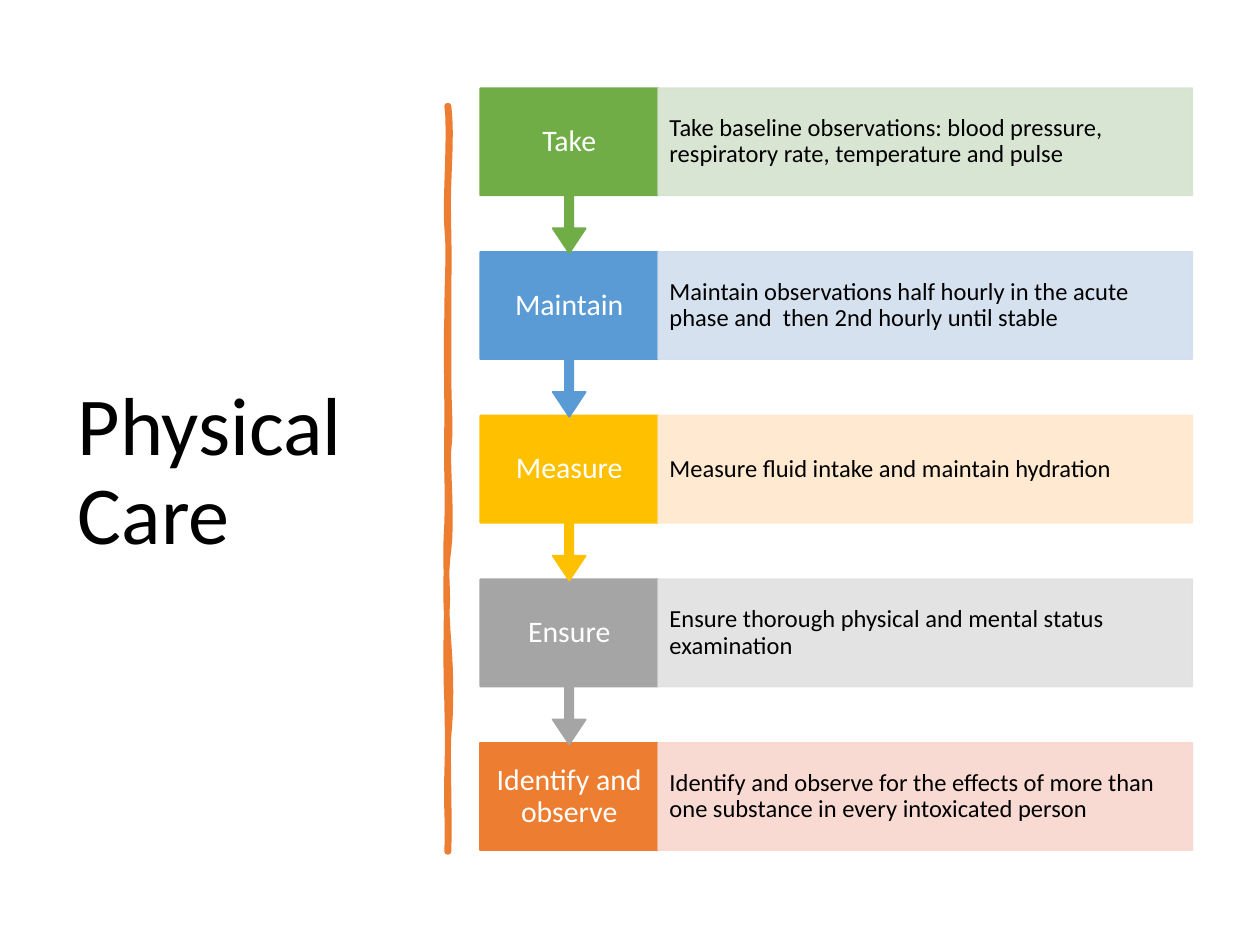
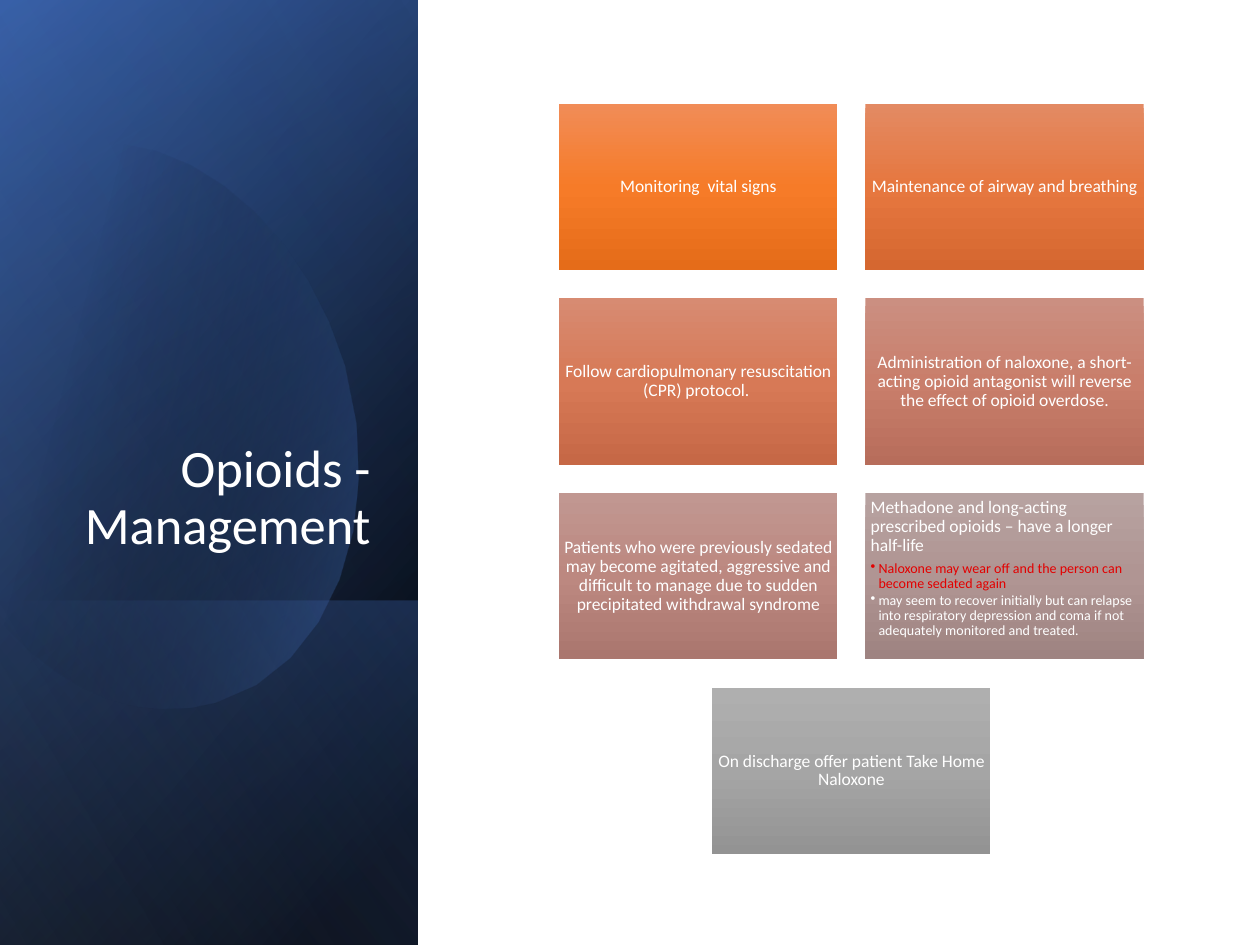
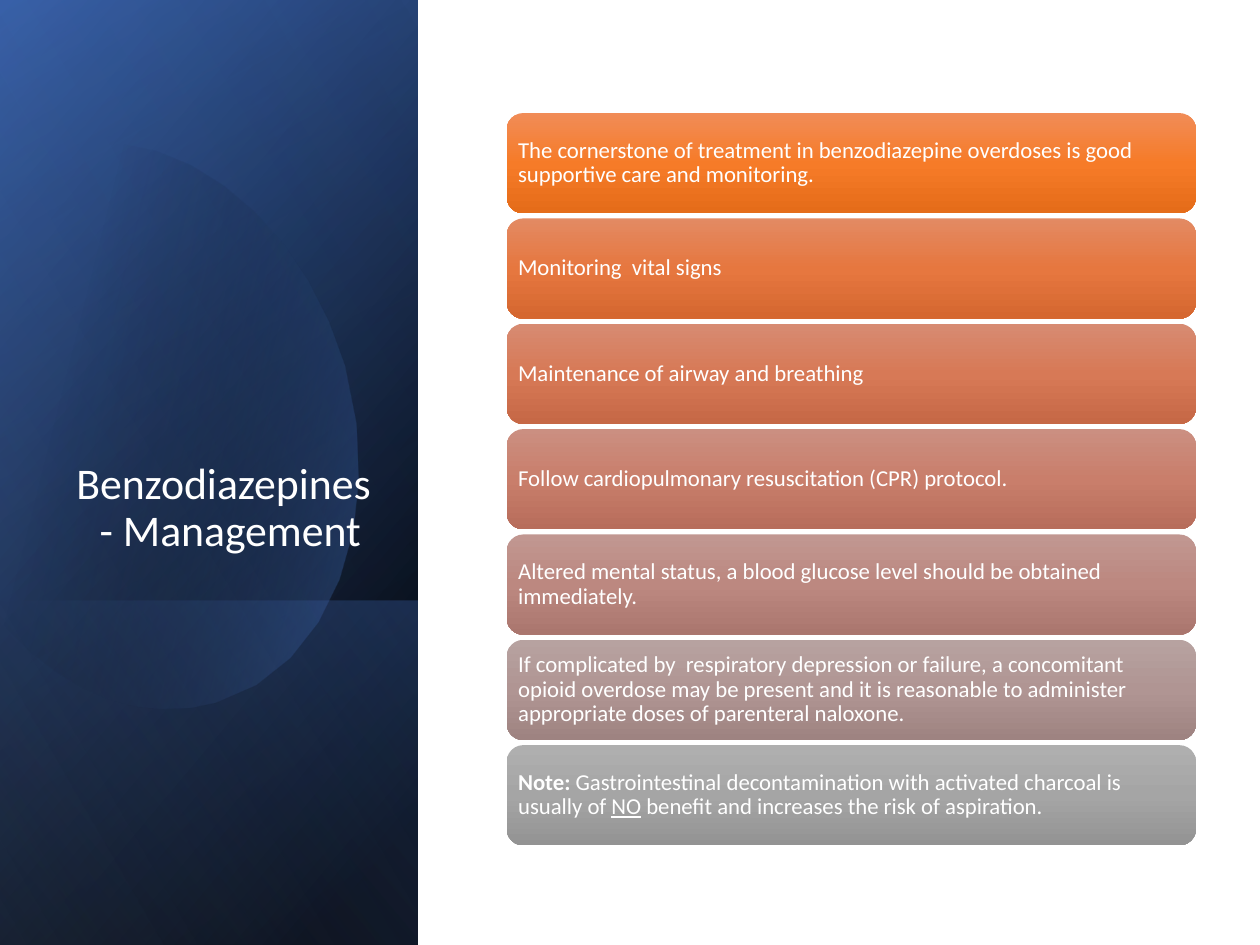
"""Build three slides on the physical care of intoxicated people."""
from lxml import etree
from pptx import Presentation
from pptx import util as u
from pptx.dml.color import RGBColor
from pptx.enum import shapes, text
from pptx.oxml.ns import qn

Pt = u.Pt
SHAPE = shapes.MSO_SHAPE
ANCHOR = text.MSO_ANCHOR
ALIGN = text.PP_ALIGN
FONT = "Calibri"

COLORS = {
    "black": "000000", "white": "FFFFFF", "red": "E30000",
    "navy": "2F5597", "blue": "4472C4", "sky": "8FAADC",
    "take": "70AD47", "take_pale": "D5E3CF",
    "maintain": "5B9BD5", "maintain_pale": "D2DEEF",
    "measure": "FFC000", "measure_pale": "FFE8CC",
    "ensure": "A5A5A5", "ensure_pale": "E1E1E1",
    "identify": "ED7D31", "identify_pale": "F8D7CE",
}
SHADES = {
    "orange": ("F18C57", "F67B28", "E56C19"),
    "pumpkin": ("E38A63", "E6773F", "D56730"),
    "copper": ("D78B72", "D77956", "C66846"),
    "clay": ("CB8F81", "C97E6B", "B76D5B"),
    "rose": ("C19791", "BC8880", "AA766E"),
    "mauve": ("B7A2A0", "B09593", "9E8381"),
    "grey": ("AFAFAF", "A5A5A5", "939393"),
}

STEPS = [
    ("take", "Take", "Take baseline observations: blood pressure, "
     "respiratory rate, temperature and pulse"),
    ("maintain", "Maintain", "Maintain observations half hourly in the acute "
     "phase and  then 2nd hourly until stable"),
    ("measure", "Measure", "Measure fluid intake and maintain hydration"),
    ("ensure", "Ensure", "Ensure thorough physical and mental status examination"),
    ("identify", "Identify and observe", "Identify and observe for the effects "
     "of more than one substance in every intoxicated person"),
]
OPIOID_TILES = [
    "Monitoring  vital signs",
    "Maintenance of airway and breathing",
    "Follow cardiopulmonary resuscitation (CPR) protocol. ",
    "Administration of naloxone, a short-acting opioid antagonist will "
    "reverse the effect of opioid overdose.",
    "Patients who were previously sedated may become agitated, aggressive and "
    "difficult to manage due to sudden precipitated withdrawal syndrome",
    "Methadone and long-acting prescribed opioids – have a longer half-life",
    "On discharge offer patient Take Home Naloxone",
]
METHADONE_POINTS = [
    ("Naloxone may wear off and the person can become sedated again", "red"),
    ("may seem to recover initially but can relapse into respiratory "
     "depression and coma if not adequately monitored and treated.", "white"),
]
BENZO_ROWS = [
    "The cornerstone of treatment in benzodiazepine overdoses is good "
    "supportive care and monitoring.",
    "Monitoring  vital signs",
    "Maintenance of airway and breathing",
    "Follow cardiopulmonary resuscitation (CPR) protocol.",
    "Altered mental status, a blood glucose level should be obtained immediately.",
    "If complicated by  respiratory depression or failure, a concomitant opioid "
    "overdose may be present and it is reasonable to administer appropriate "
    "doses of parenteral naloxone.",
    [("Note: ", "bold"),
     ("Gastrointestinal decontamination with activated charcoal is usually of ", None),
     ("NO", "underline"),
     (" benefit and increases the risk of aspiration.", None)],
]

BAR_RIGHT = [
    (256.3, 60.5), (257.8, 73.4), (257, 85.7), (256.3, 105.1),
    (255.6, 124.6), (257, 140.4), (256.3, 162.7),
    (256.3, 185), (256.3, 188.6), (256.3, 211.7),
    (256.3, 234), (257.8, 246.2), (256.3, 256.3),
    (255.6, 266.4), (258.5, 298.1), (256.3, 313.9),
    (254.2, 329), (254.9, 348.5), (256.3, 367.2),
    (257.8, 385.9), (257.8, 406.1), (256.3, 420.5),
    (255.6, 434.2), (257, 468), (256.3, 486.7),
]
BAR_LEFT = [
    (255.6, 486.7), (256.3, 465.1), (254.9, 463.7), (255.6, 441.4),
    (256.3, 419.8), (255.6, 410.4), (255.6, 401),
    (254.9, 391.7), (254.9, 356.4), (255.6, 343.4),
    (255.6, 330.5), (254.2, 320.4), (255.6, 298.8),
    (256.3, 277.9), (254.9, 268.6), (255.6, 241.2),
    (255.6, 214.6), (254.9, 202.3), (255.6, 180),
    (255.6, 157), (257, 144), (255.6, 130.3),
    (254.2, 117.4), (257.8, 74.9), (255.6, 60.5),
]
OVAL_RIGHT = [
    (69.1, 82.1), (123.1, 87.8), (175.7, 138.2), (196.6, 208.8),
    (221, 296.6), (188.6, 382.3), (123.1, 401),
    (82.1, 413.3), (38.2, 396), (5, 360),
]
OVAL_LEFT = [
    (-10.8, 110.9), (1.4, 98.6), (15.8, 90), (32.4, 85),
    (44.6, 81.4), (56.9, 80.6), (69.1, 82.1),
]


def rgb(name):
    """Return the named colour."""
    return RGBColor.from_string(COLORS[name])


def solid(sp, color, alpha=100, line=1):
    """Give a shape one colour for fill and line."""
    sp.shadow.inherit = False
    sp.fill.solid()
    sp.fill.fore_color.rgb = rgb(color)
    sp.line.color.rgb = rgb(color)
    sp.line.width = Pt(line)
    if alpha < 100:
        for clr in sp._element.spPr.iter(qn("a:srgbClr")):
            etree.SubElement(clr, qn("a:alpha"), val=str(alpha * 1000))


def gradient(sp, stops, angle):
    """Fill a shape with (position, hex, alpha) stops, at a clockwise angle."""
    sp.shadow.inherit = False
    sp.line.fill.background()
    sp.fill.gradient()
    sp.fill.gradient_angle = 360 - angle
    gs_list = sp._element.spPr.find(".//" + qn("a:gsLst"))
    gs_list.clear()
    for pos, color, alpha in stops:
        gs = etree.SubElement(gs_list, qn("a:gs"), pos=str(pos * 1000))
        clr = etree.SubElement(gs, qn("a:srgbClr"), val=color)
        if alpha < 100:
            etree.SubElement(clr, qn("a:alpha"), val=str(alpha * 1000))


def add_shape(s, kind, left, top, width, height):
    """Add a preset shape."""
    return s.shapes.add_shape(kind, Pt(left), Pt(top), Pt(width), Pt(height))


def bezier(points, steps=8):
    """Return points along a chain of cubic curves."""
    path = [points[0]]
    for i in range(0, len(points) - 1, 3):
        a, b, c, d = points[i:i + 4]
        for n in range(1, steps + 1):
            t = n / steps
            v = 1 - t
            path.append(tuple(
                v**3 * a[k] + 3 * v * v * t * b[k] + 3 * v * t * t * c[k] + t**3 * d[k]
                for k in (0, 1)))
    return path


def add_outline(s, points):
    """Add a closed freeform through the points."""
    corners = [(Pt(x), Pt(y)) for x, y in points]
    builder = s.shapes.build_freeform(*corners[0])
    builder.add_line_segments(corners[1:], close=True)
    return builder.convert_to_shape()


def style(p, size, color, align=ALIGN.LEFT, after=0):
    """Set the font and spacing of a paragraph."""
    p.font.name, p.font.size = FONT, Pt(size)
    p.font.color.rgb = rgb(color)
    p.alignment, p.line_spacing, p.space_after = align, 0.9, Pt(after)


def write(sp, content, size, color="white", align=ALIGN.LEFT,
          anchor=ANCHOR.MIDDLE, inset=(7.2, 3.6)):
    """Write one paragraph, given as a string or as (text, emphasis) runs."""
    tf = sp.text_frame
    tf.word_wrap, tf.vertical_anchor = True, anchor
    tf.margin_left = tf.margin_right = Pt(inset[0])
    tf.margin_top = tf.margin_bottom = Pt(inset[1])
    p = tf.paragraphs[0]
    style(p, size, color, align)
    runs = [(content, None)] if isinstance(content, str) else content
    for words, emphasis in runs:
        r = p.add_run()
        r.text = words
        if emphasis:
            setattr(r.font, emphasis, True)
    return tf


def add_bullet(tf, words, size, color):
    """Add a bulleted paragraph."""
    p = tf.add_paragraph()
    p.text = words
    style(p, size, color, after=1.2)
    pPr = p._p.get_or_add_pPr()
    pPr.set("marL", str(Pt(4.5)))
    pPr.set("indent", str(Pt(-4.5)))
    bullet = etree.Element(qn("a:buChar"), char="•")
    pPr.find(qn("a:defRPr")).addprevious(bullet)


def add_title(s, words, box, size, color, align, anchor):
    """Add a slide title."""
    sp = s.shapes.add_textbox(*(Pt(v) for v in box))
    write(sp, words, size, color, align, anchor)


def add_side_panel(s, title, size):
    """Add the dark gradient panel with its title."""
    black, navy, blue, sky = (COLORS[c] for c in ("black", "navy", "blue", "sky"))

    def layer(top, stops, angle):
        """Add one gradient layer from top to the slide's foot."""
        gradient(add_shape(s, SHAPE.RECTANGLE, 0, top, 238.8, 540 - top), stops, angle)

    layer(0, [(8, black, 100), (100, navy, 100)], 220)
    layer(0, [(0, black, 0), (99, blue, 46)], 240)
    layer(343, [(2, blue, 29), (100, black, 30)], 140)
    edge = [(-2.2, 351.4), (-18, 119.5)]
    oval = add_outline(s, bezier(OVAL_RIGHT) + edge + bezier(OVAL_LEFT))
    gradient(oval, [(29, black, 0), (100, blue, 43)], 14)
    layer(0, [(0, black, 0), (99, sky, 11)], 150)
    add_title(s, title, (34.6, 132.5, 184.3, 188.6), size, "white",
              ALIGN.RIGHT, ANCHOR.BOTTOM)


def add_shaded(s, kind, box, shade):
    """Add a shape shaded from top to bottom."""
    sp = add_shape(s, kind, *box)
    gradient(sp, [(pos, c, 100) for pos, c in zip((0, 50, 100), shade)], 90)
    return sp


def add_step(s, top, key, label, detail, last):
    """Add a step label, with an arrow unless last, and its detail box."""
    left, width, height = 274.5, 101.6, 61.2
    if last:
        sp = add_shape(s, SHAPE.RECTANGLE, left, top, width, height)
    else:
        sp = add_shape(s, SHAPE.DOWN_ARROW_CALLOUT, left, top, width, 94.2)
        for i, value in enumerate((0.05, 0.1, 0.15, 0.65)):
            sp.adjustments[i] = value
    solid(sp, key)
    write(sp, label, 17, align=ALIGN.CENTER, inset=(7.2, 9.4))
    sp = add_shape(s, SHAPE.RECTANGLE, left + width, top, 305.3, height)
    solid(sp, key + "_pale", alpha=90)
    write(sp, detail, 14, "black", inset=(6.5, 13.5))


def physical_care(s):
    """Build the slide of care steps."""
    add_title(s, "Physical Care", (37.4, 50.4, 201.6, 440), 47, "black",
              ALIGN.LEFT, ANCHOR.MIDDLE)
    bar = add_outline(s, bezier(BAR_RIGHT) + bezier(BAR_LEFT))
    solid(bar, "identify", line=3.25)
    etree.SubElement(bar.line._get_or_add_ln(), qn("a:round"))
    for i, step in reversed(list(enumerate(STEPS))):
        add_step(s, 50.4 + i * 93.55, *step, last=i == len(STEPS) - 1)


def opioids(s):
    """Build the slide of opioid tiles, two to a row."""
    add_side_panel(s, "Opioids - Management ", 30)
    left, top, pitch_x, pitch_y = 319.5, 59.3, 175, 111.2
    for i, (words, shade) in enumerate(zip(OPIOID_TILES, SHADES.values())):
        row, col = divmod(i, 2)
        if i == len(OPIOID_TILES) - 1:
            col = 0.5
        box = (left + col * pitch_x, top + row * pitch_y, 159, 95.2)
        sp = add_shaded(s, SHAPE.RECTANGLE, box, shade)
        if words.startswith("Methadone"):
            tf = write(sp, words, 10, anchor=ANCHOR.TOP, inset=(3, 3))
            tf.paragraphs[0].space_after = Pt(3.5)
            for point, color in METHADONE_POINTS:
                add_bullet(tf, point, 8, color)
        else:
            write(sp, words, 10, align=ALIGN.CENTER, inset=(3, 3))


def benzodiazepines(s):
    """Build the slide of benzodiazepine rows."""
    add_side_panel(s, "Benzodiazepines - Management ", 25)
    for i, (words, shade) in enumerate(zip(BENZO_ROWS, SHADES.values())):
        box = (289.5, 64.6 + i * 60.2, 394, 57.3)
        sp = add_shaded(s, SHAPE.ROUNDED_RECTANGLE, box, shade)
        write(sp, words, 13, inset=(3.8, 3.8))


def main():
    """Build and save the slides."""
    prs = Presentation()
    prs.slide_width, prs.slide_height = Pt(720), Pt(540)
    for build in (physical_care, opioids, benzodiazepines):
        build(prs.slides.add_slide(prs.slide_layouts[6]))
    prs.save("out.pptx")


if __name__ == "__main__":
    main()
